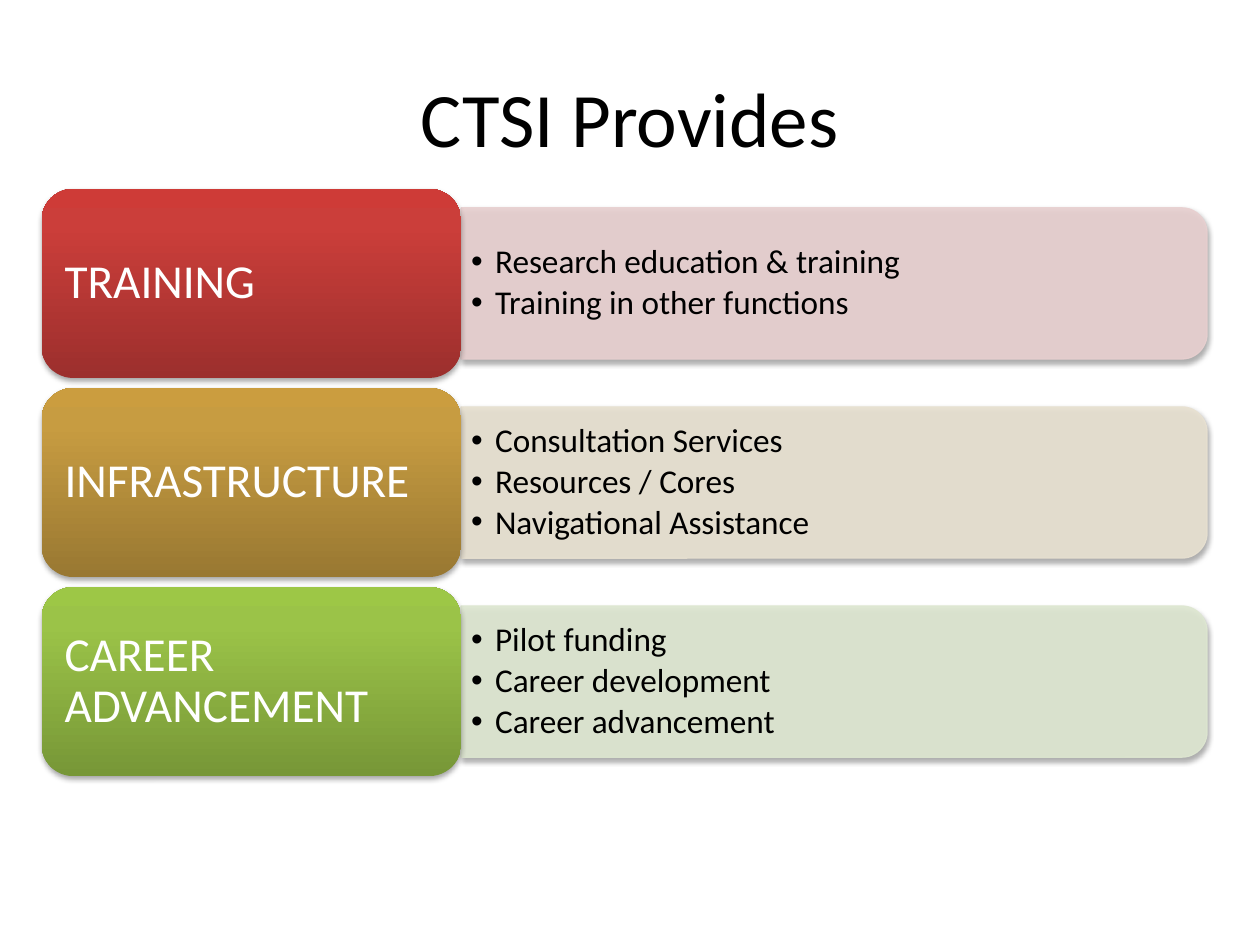
"""Build the CTSI Provides slide: three labelled rows of services."""
import pptx
import pptx.util
import pptx.dml.color
import pptx.enum.shapes
import pptx.enum.text
import pptx.oxml.ns
import lxml.etree

Inches, Pt = pptx.util.Inches, pptx.util.Pt
RGBColor = pptx.dml.color.RGBColor
MSO_SHAPE = pptx.enum.shapes.MSO_SHAPE
MIDDLE = pptx.enum.text.MSO_ANCHOR.MIDDLE
ALIGN = pptx.enum.text.PP_ALIGN
qn = pptx.oxml.ns.qn

FONT = "Calibri"
BLACK = RGBColor(0x00, 0x00, 0x00)
WHITE = RGBColor(0xFF, 0xFF, 0xFF)
PINK = RGBColor(0xE8, 0xD0, 0xD0)
SAND = RGBColor(0xE8, 0xE1, 0xD1)
MINT = RGBColor(0xDE, 0xE7, 0xD1)
REDS = (RGBColor(0x9C, 0x2F, 0x2D), RGBColor(0xCB, 0x3E, 0x3A), RGBColor(0xCE, 0x3B, 0x37))
GOLDS = (RGBColor(0x99, 0x78, 0x32), RGBColor(0xC7, 0x9C, 0x41), RGBColor(0xCB, 0x9D, 0x3F))
GREENS = (RGBColor(0x77, 0x97, 0x37), RGBColor(0x9B, 0xC3, 0x48), RGBColor(0x9D, 0xC7, 0x46))
STOPS = (0, 80, 100)

LEFT, TOP, ROW_PITCH = 0.33, 1.5, 1.58
LABEL_WIDTH, LABEL_HEIGHT = 3.33, 1.5
PANEL_LEFT, PANEL_WIDTH, PANEL_HEIGHT = LEFT + LABEL_WIDTH, 5.92, 1.2
BULLETS_WIDTH, BULLETS_HEIGHT = 5.86, 1.09

ROWS = (
    ("TRAINING", REDS, PINK,
     ("Research education & training", "Training in other functions")),
    ("INFRASTRUCTURE", GOLDS, SAND,
     ("Consultation Services", "Resources / Cores", "Navigational Assistance")),
    ("CAREER ADVANCEMENT", GREENS, MINT,
     ("Pilot funding", "Career development", "Career advancement")),
)


def add_child(parent, tag, **attributes):
    """Append a drawing element with its attributes and return it."""
    child = lxml.etree.SubElement(parent, qn(tag))
    for name, value in attributes.items():
        child.set(name, str(value))
    return child


def add_color(parent, color, alpha=100):
    """Append a colour with a percentage of opacity."""
    node = add_child(parent, "a:srgbClr", val=color)
    if alpha < 100:
        add_child(node, "a:alpha", val=alpha * 1000)


def add_shadow(shape):
    """Give a shape a soft shadow that falls straight down."""
    shape.shadow.inherit = False
    effects = shape.element.spPr.find(qn("a:effectLst"))
    shadow = add_child(effects, "a:outerShdw", blurRad=Pt(3.1), dist=Pt(1.8),
                       dir=5400000, rotWithShape=0)
    add_color(shadow, BLACK, 35)


def format_frame(frame, size, color, side, edge):
    """Set margins, anchor, line spacing and font of a text frame."""
    frame.word_wrap = True
    frame.vertical_anchor = MIDDLE
    frame.margin_left = frame.margin_right = Inches(side)
    frame.margin_top = frame.margin_bottom = Inches(edge)
    for para in frame.paragraphs:
        para.alignment = ALIGN.LEFT
        para.line_spacing = 0.9
        for span in para.runs:
            span.font.name, span.font.size = FONT, Pt(size)
            span.font.color.rgb = color


def add_title(slide, text):
    """Place and format the title."""
    title = slide.shapes.title
    title.left, title.top = Inches(0.5), Inches(0.3)
    title.width, title.height = Inches(9), Inches(1.25)
    frame = title.text_frame
    frame.text = text
    frame.vertical_anchor = MIDDLE
    para = frame.paragraphs[0]
    para.alignment = ALIGN.CENTER
    font = para.runs[0].font
    font.name, font.size, font.color.rgb = FONT, Pt(44), BLACK


def add_panel(slide, middle, color):
    """Add a pale panel rounded on its right side, by a quarter turn."""
    left = PANEL_LEFT + (PANEL_WIDTH - PANEL_HEIGHT) / 2
    panel = slide.shapes.add_shape(
        MSO_SHAPE.ROUND_2_SAME_RECTANGLE, Inches(left), Inches(middle - PANEL_WIDTH / 2),
        Inches(PANEL_HEIGHT), Inches(PANEL_WIDTH))
    panel.rotation = 90
    panel.fill.solid()
    panel.fill.fore_color.rgb = color
    panel.line.color.rgb = color
    panel.line.width = Pt(0.75)
    for node in panel.element.spPr.iter(qn("a:srgbClr")):
        add_child(node, "a:alpha", val=90000)
    add_shadow(panel)


def add_bullets(slide, middle, items):
    """Add the bulleted services over a panel."""
    box = slide.shapes.add_textbox(
        Inches(PANEL_LEFT), Inches(middle - BULLETS_HEIGHT / 2),
        Inches(BULLETS_WIDTH), Inches(BULLETS_HEIGHT))
    frame = box.text_frame
    frame.text = "\n".join(items)
    format_frame(frame, 19, BLACK, 0.08, 0.04)
    for para in frame.paragraphs:
        para.space_after = Pt(2.85)
        properties = para._p.get_or_add_pPr()
        properties.set("marL", str(Inches(0.19)))
        properties.set("indent", str(-Inches(0.19)))
        add_child(properties, "a:buFont", typeface="Arial")
        add_child(properties, "a:buChar", char="•")


def add_label(slide, middle, text, colors):
    """Add a rounded label with a gradient that lightens upward."""
    label = slide.shapes.add_shape(
        MSO_SHAPE.ROUNDED_RECTANGLE, Inches(LEFT), Inches(middle - LABEL_HEIGHT / 2),
        Inches(LABEL_WIDTH), Inches(LABEL_HEIGHT))
    label.line.fill.background()
    label.fill.gradient()
    label.fill.gradient_angle = 90
    stops = label.element.spPr.find(qn("a:gradFill")).find(qn("a:gsLst"))
    for stop in list(stops):
        stops.remove(stop)
    for position, color in zip(STOPS, colors):
        add_color(add_child(stops, "a:gs", pos=position * 1000), color)
    add_shadow(label)
    label.text_frame.text = text
    format_frame(label.text_frame, 27, WHITE, 0.11, 0.06)


def main():
    """Build and save the deck."""
    deck = pptx.Presentation()
    deck.slide_width, deck.slide_height = Inches(10), Inches(7.5)
    slide = deck.slides.add_slide(deck.slide_layouts.get_by_name("Title Only"))
    add_title(slide, "CTSI Provides")
    for index, (name, label_colors, panel_color, items) in enumerate(ROWS):
        middle = TOP + LABEL_HEIGHT / 2 + index * ROW_PITCH
        add_panel(slide, middle, panel_color)
        add_bullets(slide, middle, items)
        add_label(slide, middle, name, label_colors)
    deck.save("out.pptx")


if __name__ == "__main__":
    main()
